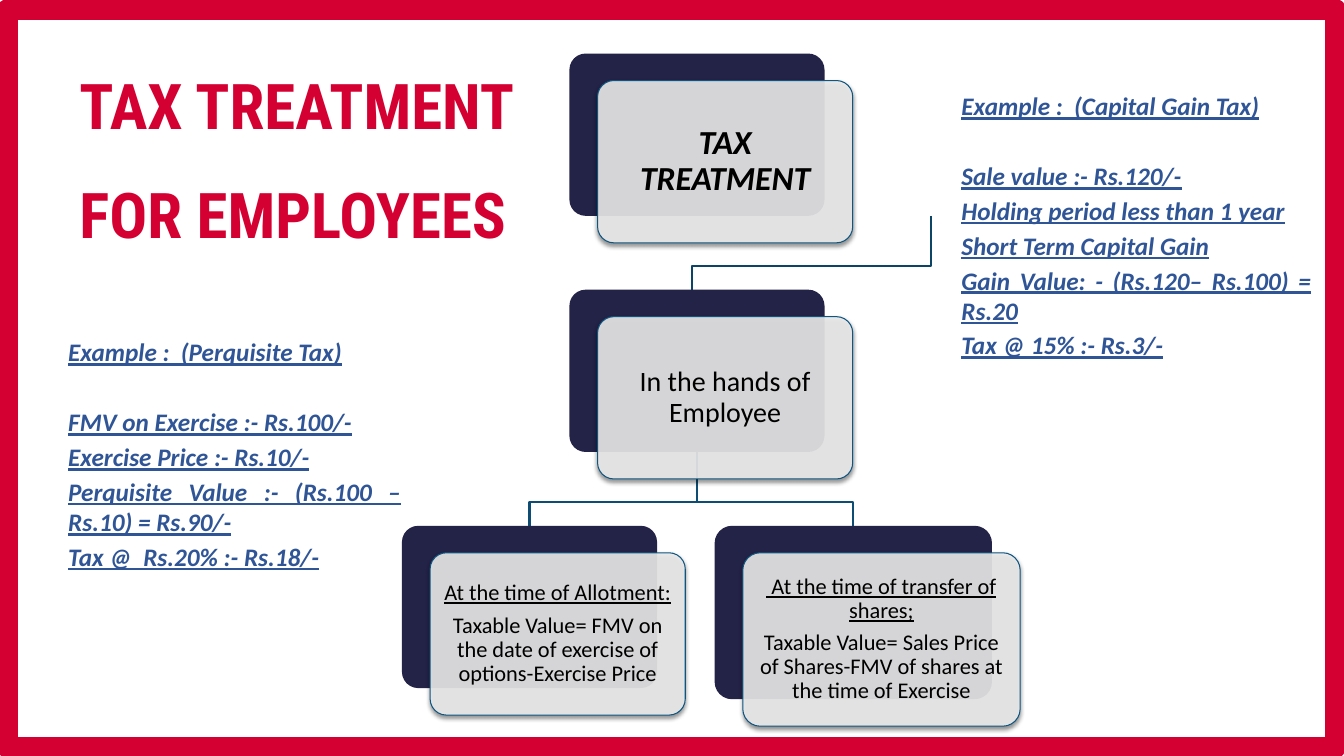
from dataclasses import dataclass
from lxml import etree
from pptx import Presentation
from pptx.dml.color import RGBColor
from pptx.enum.shapes import MSO_SHAPE
from pptx.enum.text import MSO_ANCHOR, PP_ALIGN
from pptx.oxml.ns import qn
from pptx.util import Cm, Pt

RECT, ROUND = MSO_SHAPE.RECTANGLE, MSO_SHAPE.ROUNDED_RECTANGLE
LEFT, MID, FULL = PP_ALIGN.LEFT, PP_ALIGN.CENTER, PP_ALIGN.JUSTIFY
TOP, CENTRE = MSO_ANCHOR.TOP, MSO_ANCHOR.MIDDLE


@dataclass(frozen=True)
class Theme:
    red: str = "D50032"
    navy: str = "232247"
    pale: str = "EBEBEB"
    edge: str = "0E5580"
    upper: str = "0B4467"
    lower: str = "0D4D74"
    ink: str = "000000"
    blue: str = "2F5597"
    head: str = "Roboto Condensed"
    body: str = "Calibri"
    title: int = 45
    root: int = 24
    branch: int = 20
    leaf: int = 16
    note: int = 18


T = Theme()
NOTE = {"bold": True, "italic": True, "underline": True}


def put(item, form):
    for name, value in form.items():
        setattr(item, name, value)


def paint(shape, fill=None, line=None, width=0.75):
    shape.shadow.inherit = False
    if fill:
        shape.fill.solid()
        shape.fill.fore_color.rgb = RGBColor.from_string(fill)
    else:
        shape.fill.background()
    if line:
        shape.line.color.rgb = RGBColor.from_string(line)
        shape.line.width = Pt(width)
    else:
        shape.line.fill.background()


def add_para(frame, first, text, layout, font, colour):
    para = frame.paragraphs[0] if first else frame.add_paragraph()
    put(para, layout)
    run = para.add_run()
    run.text = text
    put(run.font, font)
    run.font.color.rgb = RGBColor.from_string(colour)


def set_frame(shape, anchor, pad=None):
    frame = shape.text_frame
    put(frame, {"word_wrap": True, "vertical_anchor": anchor})
    if pad:
        sides = ("margin_left", "margin_top", "margin_right", "margin_bottom")
        put(frame, dict.fromkeys(sides, Cm(pad)))
    return frame


def add_shape(slide, kind, box):
    return slide.shapes.add_shape(kind, *map(Cm, box))


def add_text(slide, box):
    return set_frame(slide.shapes.add_textbox(*map(Cm, box)), TOP)


def soften(card):
    colour = card.fill._xPr.find(qn("a:solidFill"))[0]
    etree.SubElement(colour, qn("a:alpha"), val="90000")
    effects = card.fill._xPr.find(qn("a:effectLst"))
    shadow = etree.SubElement(
        effects, qn("a:outerShdw"), blurRad=str(Pt(3)), dist=str(Pt(2)),
        dir="5400000", algn="ctr", rotWithShape="0")
    black = etree.SubElement(shadow, qn("a:srgbClr"), val=T.ink)
    etree.SubElement(black, qn("a:alpha"), val="45000")


def add_border(slide, box):
    paint(add_shape(slide, RECT, box), line=T.red, width=15)


def add_title(slide, box, lines):
    frame = add_text(slide, box)
    font = {"name": T.head, "size": Pt(T.title), "bold": True}
    for i, text in enumerate(lines):
        layout = {"alignment": LEFT, "space_before": Pt(24)}
        add_para(frame, i == 0, text, layout, font, T.red)


def add_link(slide, start, end, colour):
    (x1, y1), (x2, y2) = start, end
    bend = y2 - 0.59
    path_to = [(x1, bend), (x2, bend), (x2, y2)]
    pen = slide.shapes.build_freeform(Cm(x1), Cm(y1))
    pen.add_line_segments([(Cm(x), Cm(y)) for x, y in path_to], close=False)
    paint(pen.convert_to_shape(), line=colour, width=1.5)


def add_node(slide, box, size, pad, lines):
    left, top, width, height = box
    back = add_shape(slide, ROUND, box)
    card = add_shape(slide, ROUND, (left + 0.71, top + 0.68, width, height))
    paint(back, T.navy)
    paint(card, T.pale, T.edge)
    soften(card)
    for shape in (back, card):
        shape.adjustments[0] = 0.1
    frame = set_frame(card, CENTRE, pad)
    layout = {"alignment": MID, "line_spacing": 0.9,
              "space_after": Pt(round(size * 0.35, 1))}
    for i, (text, style) in enumerate(lines):
        font = {"name": T.body, "size": Pt(size), **style}
        add_para(frame, i == 0, text, layout, font, T.ink)


def add_tree(slide, box):
    left, top, width, height = box
    step = 5.95
    stem = left + 4.22
    low = top + 2 * step
    root = (stem, top, width, height)
    branch = (stem, top + step, width, height)
    allot = (left, low, width, height)
    share = (left + 7.88, low, 6.99, 4.37)
    fork = (stem + width / 2, top + step + height)
    for leaf in (share, allot):
        add_link(slide, fork, (leaf[0] + leaf[2] / 2, low), T.lower)
    add_link(slide, (left + 13.34, top + height),
             (left + 7.32, top + step), T.upper)
    line = {"underline": True}
    add_node(slide, root, T.root, 0.25,
             [("TAX TREATMENT", {"bold": True, "italic": True})])
    add_node(slide, branch, T.branch, 0.2, [("In the hands of Employee", {})])
    add_node(slide, allot, T.leaf, 0.17, [
        ("At the time of Allotment:", line),
        ("Taxable Value= FMV on the date of exercise of "
         "options-Exercise Price", {})])
    add_node(slide, share, T.leaf, 0.17, [
        (" At the time of transfer of shares;", line),
        ("Taxable Value= Sales Price of Shares-FMV of shares at "
         "the time of Exercise", {})])


def add_note(slide, box, lines):
    frame = add_text(slide, box)
    font = {"name": T.body, "size": Pt(T.note), **NOTE}
    for i, text in enumerate(lines):
        gap = 28.4 if i == 1 else 3.2
        layout = {"alignment": FULL, "space_before": Pt(gap)}
        add_para(frame, i == 0, text, layout, font, T.blue)


def main():
    deck = Presentation()
    put(deck, {"slide_width": Cm(33.87), "slide_height": Cm(19.05)})
    slide = deck.slides.add_slide(deck.slide_layouts[6])
    add_border(slide, (0.2, 0.23, 33.45, 18.62))
    add_title(slide, (1.75, 1.55, 24.74, 5.05),
              ["TAX TREATMENT", "FOR EMPLOYEES"])
    add_tree(slide, (10.13, 1.35, 6.43, 4.09))
    add_note(slide, (1.47, 8.36, 8.89, 5.79), [
        "Example :  (Perquisite Tax)",
        "FMV on Exercise :- Rs.100/-",
        "Exercise Price :- Rs.10/-",
        "Perquisite Value :- (Rs.100 – Rs.10) = Rs.90/-",
        "Tax @  Rs.20% :- Rs.18/-"])
    add_note(slide, (23.98, 2.16, 9.32, 9.53), [
        "Example :  (Capital Gain Tax)",
        "Sale value :- Rs.120/-",
        "Holding period less than 1 year",
        "Short Term Capital Gain",
        "Gain Value: - (Rs.120– Rs.100) = Rs.20",
        "Tax @ 15% :- Rs.3/-"])
    deck.save("out.pptx")


if __name__ == "__main__":
    main()
